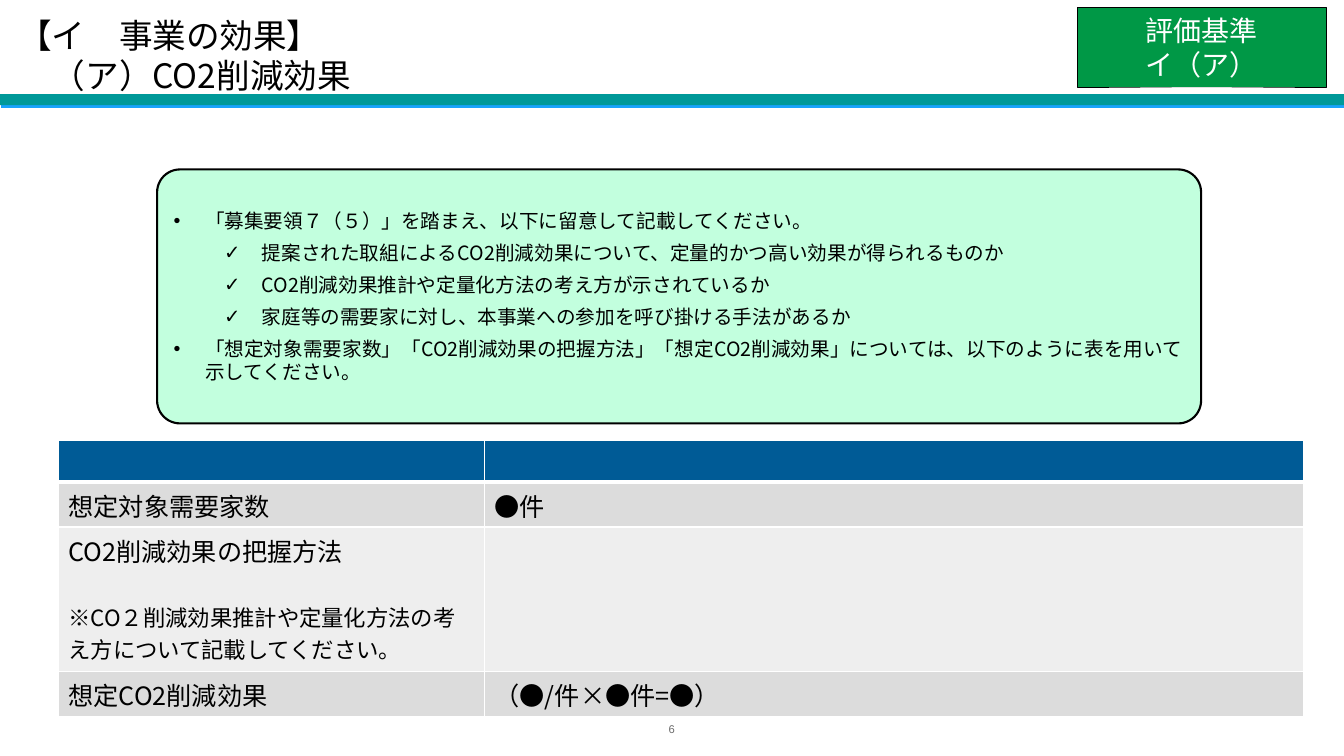
from lxml.etree import SubElement
from pptx import Presentation
from pptx.dml.color import RGBColor
from pptx.enum.shapes import MSO_SHAPE
from pptx.enum.text import MSO_ANCHOR, PP_ALIGN
from pptx.oxml import parse_xml
from pptx.oxml.ns import nsdecls, qn
from pptx.util import Cm, Pt

BLACK = RGBColor(0x00, 0x00, 0x00)
WHITE = RGBColor(0xFF, 0xFF, 0xFF)
GRAY = RGBColor(0x6B, 0x6B, 0x6B)
TEAL = RGBColor(0x00, 0x99, 0x99)
GREEN = RGBColor(0x00, 0x98, 0x46)
MINT = RGBColor(0xC2, 0xFF, 0xDE)
BLUE = RGBColor(0x00, 0x5B, 0x96)
DARK_BAND = RGBColor(0xDC, 0xDC, 0xDC)
LIGHT_BAND = RGBColor(0xEE, 0xEE, 0xEE)
JAPANESE_FONT = "Noto Sans CJK JP"


def write_lines(text_frame, lines, size, color=BLACK, font_name=JAPANESE_FONT, align=PP_ALIGN.LEFT):
    for index, line in enumerate(lines):
        paragraph = text_frame.paragraphs[0] if index == 0 else text_frame.add_paragraph()
        paragraph.text = line
        paragraph.alignment = align
        for run in paragraph.runs:
            for name, value in {"size": Pt(size), "name": font_name}.items():
                setattr(run.font, name, value)
            run.font.color.rgb = color
            SubElement(run.font._element, qn("a:ea"), typeface=font_name)


def add_box(preset, left, top, width, height, fill, line_width=None):
    shape = slide.shapes.add_shape(preset, Cm(left), Cm(top), Cm(width), Cm(height))
    shape.shadow.inherit = False
    shape.fill.solid()
    shape.fill.fore_color.rgb = fill
    if line_width:
        shape.line.color.rgb = BLACK
        shape.line.width = Pt(line_width)
    else:
        shape.line.fill.background()
    shape.text_frame.word_wrap = True
    shape.text_frame.vertical_anchor = MSO_ANCHOR.MIDDLE
    return shape


presentation = Presentation()
presentation.slide_width = Cm(33.87)
presentation.slide_height = Cm(19.05)
slide = presentation.slides.add_slide(presentation.slide_layouts[6])

# Header bar with its blue shadow
bar = add_box(MSO_SHAPE.RECTANGLE, -0.04, 2.37, 33.94, 0.28, TEAL)
bar._element.spPr.find(qn("a:effectLst")).append(parse_xml(
    f'<a:outerShdw {nsdecls("a")} dist="35560" dir="2700000" algn="ctr" rotWithShape="0">'
    '<a:srgbClr val="19A3FC"/></a:outerShdw>'))

# Title and page number
for left, top, width, height, anchor, line, size, color, font_name, align in [
    (0.46, 0, 33.4, 2.41, MSO_ANCHOR.BOTTOM, "【イ　事業の効果】\v　（ア）CO2削減効果",
     24, BLACK, JAPANESE_FONT, PP_ALIGN.LEFT),
    (16.51, 18.24, 0.84, 0.25, MSO_ANCHOR.MIDDLE, "6", 8, GRAY, "Arial", PP_ALIGN.CENTER),
]:
    text_box = slide.shapes.add_textbox(Cm(left), Cm(top), Cm(width), Cm(height))
    text_format = {"word_wrap": True, "vertical_anchor": anchor, "margin_left": 0,
                   "margin_right": 0, "margin_top": 0, "margin_bottom": 0}
    for name, value in text_format.items():
        setattr(text_box.text_frame, name, value)
    write_lines(text_box.text_frame, [line], size, color, font_name, align)

# Guidance box
guidance = [
    ("•", "「募集要領７（５）」を踏まえ、以下に留意して記載してください。"),
    ("✓", "提案された取組によるCO2削減効果について、定量的かつ高い効果が得られるものか"),
    ("✓", "CO2削減効果推計や定量化方法の考え方が示されているか"),
    ("✓", "家庭等の需要家に対し、本事業への参加を呼び掛ける手法があるか"),
    ("•", "「想定対象需要家数」「CO2削減効果の把握方法」「想定CO2削減効果」については、以下のように表を用いて示してください。"),
]
indents = {"•": (0.79, -0.79), "✓": (2.22, -0.95)}
guidance_box = add_box(MSO_SHAPE.ROUNDED_RECTANGLE, 3.96, 4.27, 26.31, 6.4, MINT, 1.5)
guidance_box.adjustments[0] = 0.09
write_lines(guidance_box.text_frame, [line for _, line in guidance], 14)
for index, (bullet, _) in enumerate(guidance):
    paragraph = guidance_box.text_frame.paragraphs[index]
    paragraph.level = 1 if bullet == "✓" else 0
    paragraph.space_before = Pt(6 if index else 0)
    properties = paragraph._p.get_or_add_pPr()
    margin, indent = indents[bullet]
    properties.set("marL", str(Cm(margin)))
    properties.set("indent", str(Cm(indent)))
    SubElement(properties, qn("a:buFont"), typeface="Arial")
    SubElement(properties, qn("a:buChar"), char=bullet)

# Criterion label
label = add_box(MSO_SHAPE.RECTANGLE, 27.15, 0.18, 6.27, 2.01, GREEN, 0.25)
for side in ("left", "right", "top", "bottom"):
    setattr(label.text_frame, f"margin_{side}", Cm(0.1))
write_lines(label.text_frame, ["評価基準", "イ（ア）"], 20, WHITE, align=PP_ALIGN.CENTER)

# Effect table
rows = [
    (1.04, BLUE, [], []),
    (1.14, DARK_BAND, ["想定対象需要家数"], ["●件"]),
    (3.64, LIGHT_BAND, ["CO2削減効果の把握方法", "※CO２削減効果推計や定量化方法の考え方について記載してください。"], []),
    (1.14, DARK_BAND, ["想定CO2削減効果"], ["（●/件×●件=●）"]),
]
table = slide.shapes.add_table(len(rows), 2, Cm(1.47), Cm(11.1), Cm(31.37), Cm(6.96)).table
for column, width in zip(table.columns, (10.74, 20.63)):
    column.width = Cm(width)
for row_index, (height, fill, *texts) in enumerate(rows):
    table.rows[row_index].height = Cm(height)
    for column_index, lines in enumerate(texts):
        cell = table.cell(row_index, column_index)
        write_lines(cell.text_frame, lines, 18)
        for note in cell.text_frame.paragraphs[1:]:
            note.space_before = Pt(23)
            note.runs[0].font.size = Pt(16)
        properties = cell._tc.get_or_add_tcPr()
        for side in ("L", "R", "T", "B"):
            thick = (row_index, side) in ((0, "B"), (1, "T"))
            properties.append(parse_xml(
                f'<a:ln{side} {nsdecls("a")} w="{Pt(3 if thick else 1)}"><a:solidFill>'
                f'<a:srgbClr val="{WHITE}"/></a:solidFill></a:ln{side}>'))
        cell.fill.solid()
        cell.fill.fore_color.rgb = fill

presentation.save("out.pptx")
